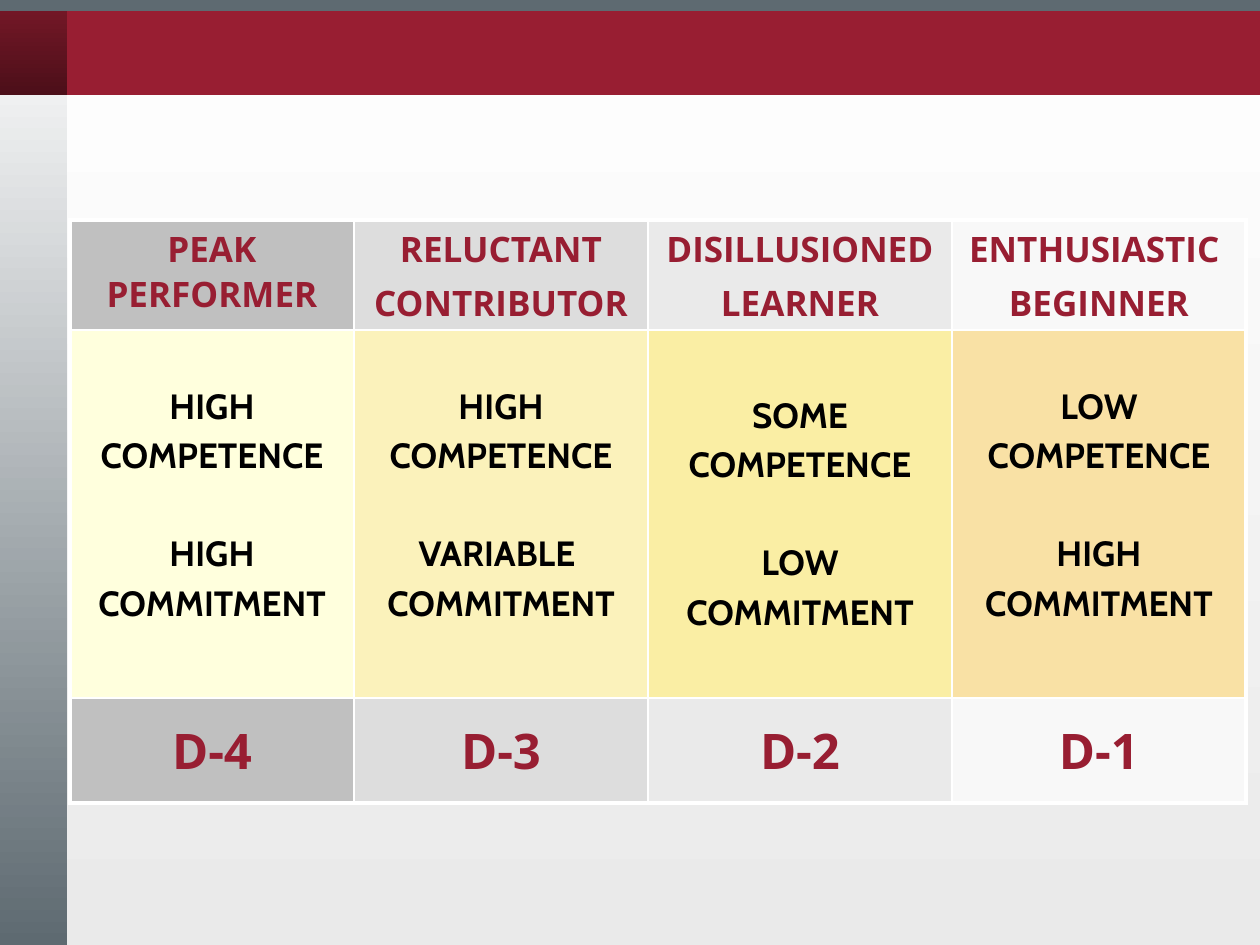
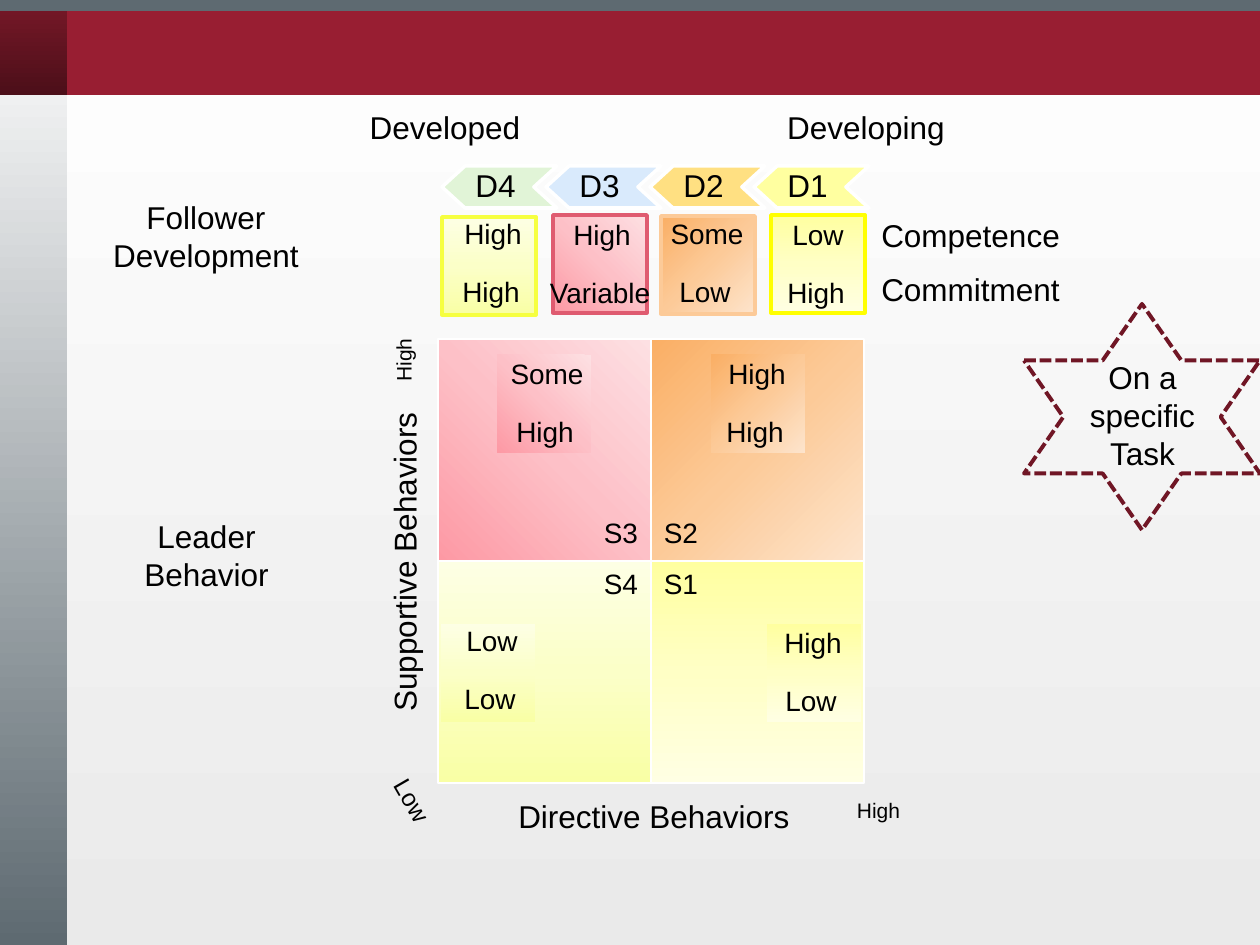
"""Build two slides on situational leadership: development levels and the style grid."""
from pptx import Presentation
from pptx.dml.color import RGBColor
from pptx.enum.dml import MSO_LINE
from pptx.enum.shapes import MSO_SHAPE
from pptx.enum.text import MSO_ANCHOR, PP_ALIGN
from pptx.oxml import parse_xml
from pptx.oxml.ns import nsdecls
from pptx.util import Emu, Pt

PX = 914400 / 126
RECT, STAR = MSO_SHAPE.RECTANGLE, MSO_SHAPE.STAR_6_POINT
TOP, MID, LOW = MSO_ANCHOR.TOP, MSO_ANCHOR.MIDDLE, MSO_ANCHOR.BOTTOM
CENTER = PP_ALIGN.CENTER
DASH = MSO_LINE.SQUARE_DOT
HEX = {
    "crimson": "981E32", "slate": "5E6A71", "white": "FFFFFF", "black": "000000",
    "mist": "EAEAEA", "wine": "701625", "yellow": "FFFF00", "lemon": "F6FF40",
    "pink": "DF5B70", "tan": "FCCA98",
    "D4": "E1F4D7", "D3": "D9EAFC", "D2": "FFE082", "D1": "FFFFA0",
}
UP = '<a:lin ang="16200000" scaled="0"/>'
DOWN = '<a:lin ang="5400000" scaled="0"/>'
RADIAL = '<a:path path="circle"><a:fillToRect {}/></a:path>'
TONES = {
    "rail": (["5E6A71", "FFFFFF"], UP),
    "corner": (["4C0F19", "721726"], UP),
    "lime": (["F9FFA5", "FBFFC8", "FDFFE4"], UP),
    "sun": (["FFFFA0", "FFFFC5", "FFFFE3"], DOWN),
    "rose": (["FD99A4", "FDC0C7", "FDE0E3"], RADIAL.format('t="100000" r="100000"')),
    "peach": (["FAAF65", "FCCA98", "FDE4CC"], RADIAL.format('r="100000" b="100000"')),
}


def box(slide, kind, frame, tone=None, edge=None, width=2):
    """Add a preset shape with a plain or graded fill."""
    shape = slide.shapes.add_shape(kind, *[Emu(round(n * PX)) for n in frame])
    shape.shadow.inherit = False
    shape.fill.background()
    if tone in TONES:
        hues, path = TONES[tone]
        stops = "".join(
            f'<a:gs pos="{100000 * i // (len(hues) - 1)}"><a:srgbClr val="{hue}"/></a:gs>'
            for i, hue in enumerate(hues))
        grad = parse_xml(f'<a:gradFill {nsdecls("a")} rotWithShape="1">'
                         f'<a:gsLst>{stops}</a:gsLst>{path}</a:gradFill>')
        blank = shape._element.spPr.xpath("a:noFill")[0]
        blank.getparent().replace(blank, grad)
    elif tone:
        shape.fill.solid()
        shape.fill.fore_color.rgb = RGBColor.from_string(HEX[tone])
    if edge:
        shape.line.color.rgb = RGBColor.from_string(HEX[edge])
        shape.line.width = Pt(width)
    else:
        shape.line.fill.background()
    return shape


def write(frame, words, size, font="Arial", hue="black", **form):
    """Put centred lines of text in a text frame."""
    frame.text = words
    for para in frame.paragraphs:
        for key, val in {"alignment": CENTER, **form}.items():
            setattr(para, key, val)
        look = {"name": font, "size": Pt(size), "bold": font != "Arial"}
        for key, val in look.items():
            setattr(para.font, key, val)
        para.font.color.rgb = RGBColor.from_string(HEX[hue])


deck = Presentation()
deck.slide_width, deck.slide_height = Emu(round(1260 * PX)), Emu(round(945 * PX))
blank = deck.slide_layouts[6]
first, second = [deck.slides.add_slide(blank) for _ in range(2)]

master = deck.slide_master
back = master.background.fill
back.gradient()
back.gradient_angle = 90
for stop, hue in zip(back.gradient_stops, ("mist", "white")):
    stop.color.rgb = RGBColor.from_string(HEX[hue])
bands = [
    ((0, 0, 67, 945), "rail"),
    ((0, 11, 1260, 84), "crimson"),
    ((-2, 11, 69, 84), "corner"),
    ((-2, 0, 1262, 11), "slate"),
]
for i, (frame, tone) in enumerate(bands):
    band = box(first, RECT, frame, tone)._element
    band.nvSpPr.cNvPr.set("id", str(50 + i))
    master.shapes._spTree.insert(2 + i, band)

wides, talls = [284, 294, 304, 294], [110, 368, 105]
grid = first.shapes.add_table(
    3, 4, *[Emu(round(n * PX)) for n in (70, 220, sum(wides), sum(talls))]).table
for col, wide in zip(grid.columns, wides):
    col.width = Emu(round(wide * PX))
for row, tall in zip(grid.rows, talls):
    row.height = Emu(round(tall * PX))
grays = ["C0C0C0", "DDDDDD", "EAEAEA", "F8F8F8"]
creams = ["FFFFDD", "FBF2BB", "FAEEA4", "F9E1A5"]
levels = [
    ("PEAK PERFORMER", "HIGH", "HIGH", "D-4", TOP, 57),
    ("RELUCTANT\nCONTRIBUTOR", "HIGH", "VARIABLE ", "D-3", TOP, 57),
    ("DISILLUSIONED\nLEARNER", "SOME", "LOW", "D-2", LOW, 66),
    ("ENTHUSIASTIC \nBEGINNER", "LOW", "HIGH", "D-1", LOW, 57),
]
for c, (name, skill, will, code, anchor, inset) in enumerate(levels):
    body = f"{skill}\nCOMPETENCE\n{will}\nCOMMITMENT"
    rows = [
        (name, 20, "Open Sans", "crimson", grays[c], anchor),
        (body, 20, "Cabin", "black", creams[c], TOP),
        (code, 28, "Open Sans", "crimson", grays[c], MID),
    ]
    for r, (words, size, font, hue, fill, place) in enumerate(rows):
        cell = grid.cell(r, c)
        cell.fill.solid()
        cell.fill.fore_color.rgb = RGBColor.from_string(fill)
        cell.vertical_anchor = place
        write(cell.text_frame, words, size, font, hue,
              line_spacing=0.95, space_before=Pt(size / 4))
        sides = {"L": c == 0, "R": c == 3, "T": r == 0, "B": r == 2}
        props = cell._tc.get_or_add_tcPr()
        for i, (side, outer) in enumerate(sides.items()):
            props.insert(i, parse_xml(
                f'<a:ln{side} {nsdecls("a")} w="{28575 if outer else 12700}">'
                f'<a:solidFill><a:srgbClr val="{HEX["white"]}"/></a:solidFill></a:ln{side}>'))
    grid.cell(0, c).margin_bottom = Emu(round(4 * PX))
    mid = grid.cell(1, c)
    mid.margin_top = Emu(round(inset * PX))
    mid.text_frame.paragraphs[2].space_before = Pt(33)

labels = [
    ("Competence", 868, 210, 205, 50, 18, 0),
    ("Commitment", 868, 264, 205, 50, 18, 0),
    ("Directive Behaviors", 504, 791, 300, 50, 18, 0),
    ("Supportive Behaviors", 240, 537, 328, 50, 18, 270),
    ("High", 369, 341, 69, 38, 12, 270),
    ("High", 844, 791, 69, 38, 12, 0),
    ("Low", 377, 779, 70, 43, 14, 60),
    ("Developing", 774, 102, 184, 50, 18, 0),
    ("Developed", 356, 102, 178, 50, 18, 0),
    ("On a\nspecific\nTask", 1068, 352, 149, 127, 18, 0),
    ("Follower\nDevelopment", 100, 192, 212, 89, 18, 0),
    ("Leader\nBehavior", 131, 511, 151, 89, 18, 0),
]

quads = [("rose", "S3", 0, 0), ("lime", "S4", 0, 1), ("peach", "S2", 1, 0), ("sun", "S1", 1, 1)]
for tone, code, c, r in quads:
    box(second, RECT, (438 + 213 * c, 339 + 222 * r, 213, 222), tone, "white", 1.5)
    labels.append((code, 590 + 60 * c, 509 + 51 * r, 62, 46, 16, 0))

for i, code in reversed(list(enumerate(("D4", "D3", "D2", "D1")))):
    left, top = 442 + 104 * i, 166
    dots = [(left + x, top + y) for x, y in
            ((115, 42), (23, 42), (0, 21), (23, 0), (115, 0), (92, 21))]
    path = second.shapes.build_freeform(*dots[0], scale=PX)
    path.add_line_segments(dots[1:], close=True)
    arrow = path.convert_to_shape()
    arrow.shadow.inherit = False
    arrow.fill.solid()
    arrow.fill.fore_color.rgb = RGBColor.from_string(HEX[code])
    arrow.line.color.rgb = RGBColor.from_string(HEX["white"])
    arrow.line.width = Pt(2)
    frame = arrow.text_frame
    insets = {"margin_left": 30, "margin_top": 4, "margin_right": 38, "margin_bottom": 4}
    for key, val in insets.items():
        setattr(frame, key, Emu(round(val * PX)))
    frame.vertical_anchor = MID
    write(frame, code, 18, line_spacing=0.9)

cards = [
    ("lime", 442, 217, "lemon", "High", "High", 493, 210),
    ("rose", 553, 215, "pink", "High", "Variable", 602, 211),
    ("peach", 661, 216, "tan", "Some", "Low", 707, 210),
    ("sun", 771, 215, "yellow", "Low", "High", 818, 211),
    ("sun", 767, 624, None, "High", "Low", 813, 619),
    ("peach", 711, 355, None, "High", "High", 757, 350),
    ("rose", 497, 355, None, "Some", "High", 547, 350),
    ("lime", 441, 624, None, "Low", "Low", 492, 617),
]
for tone, left, top, edge, upper, lower, mid, high in cards:
    box(second, RECT, (left, top, 94, 98), tone, edge)
    labels.append((upper, mid - 65, high, 130, 46, 16, 0))
    labels.append((lower, mid - 67, high + 58, 130, 46, 16, 0))

star = box(second, STAR, (1024, 304, 236, 226), None, "wine", 2.25)
star.line.dash_style = DASH

for words, left, top, wide, tall, size, turn in labels:
    label = second.shapes.add_textbox(*[Emu(round(n * PX)) for n in (left, top, wide, tall)])
    label.rotation = turn
    label.text_frame.word_wrap = False
    write(label.text_frame, words, size)

deck.save("out.pptx")
